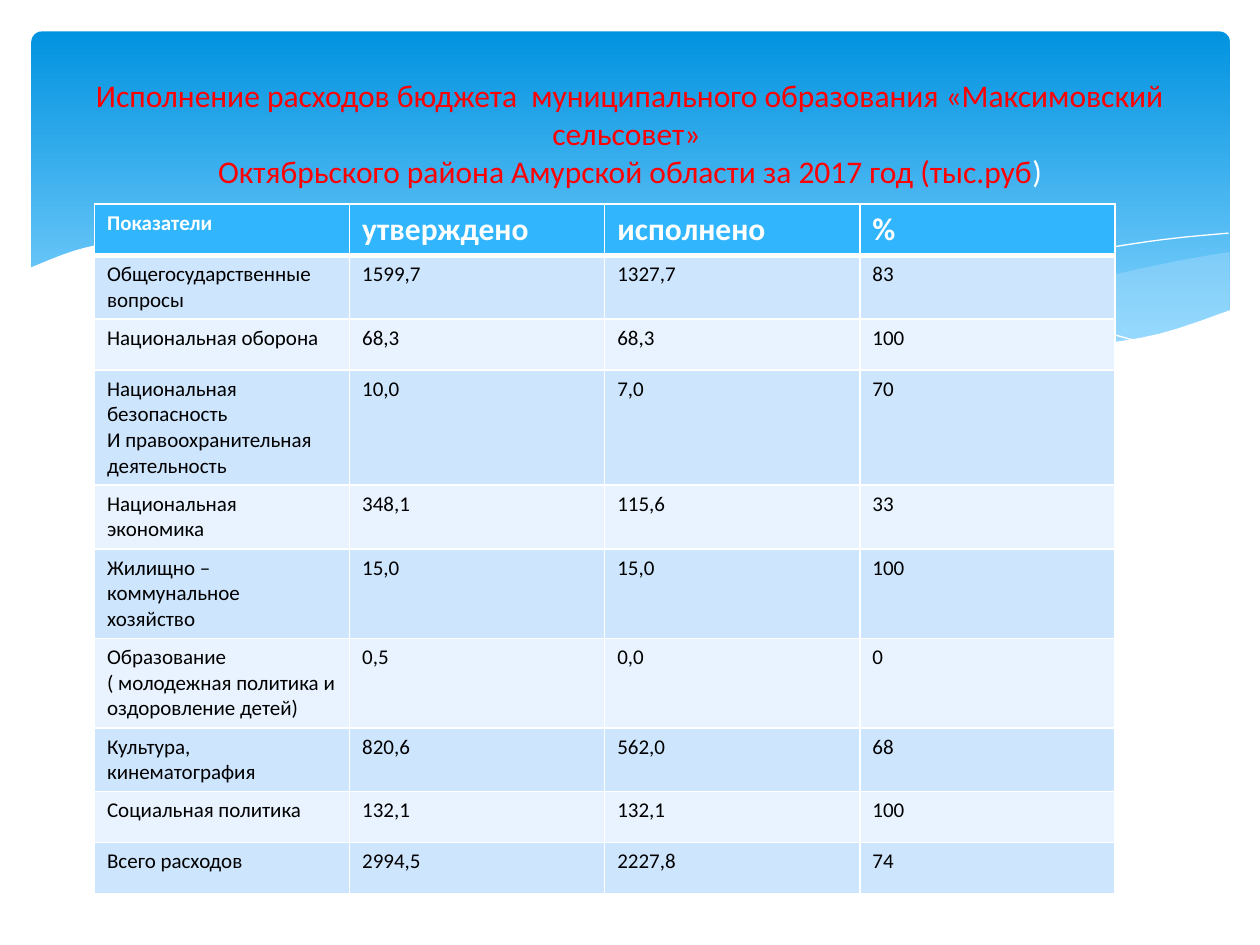
from lxml import etree
from pptx import Presentation, util as u
from pptx.dml.color import RGBColor
from pptx.enum import shapes, text
from pptx.oxml import ns

COLORS = {"white": "FFFFFF", "black": "000000", "red": "FF0000",
          "sky_top": "0293E0", "sky_bottom": "83D3FE", "wave": "C6E7FC",
          "header": "31B6FD", "odd": "CEE5FE", "even": "E8F3FF"}

TITLE = ["Исполнение расходов бюджета  муниципального образования «Максимовский сельсовет» ",
         "Октябрьского района Амурской области за 2017 год (тыс.руб"]

ROWS = [
    ("Показатели", "утверждено", "исполнено", "%"),
    ("Общегосударственные  вопросы", "1599,7", "1327,7", "83"),
    ("Национальная оборона", "68,3", "68,3", "100"),
    ("Национальная безопасность\nИ правоохранительная деятельность", "10,0", "7,0", "70"),
    ("Национальная  экономика", "348,1", "115,6", "33"),
    ("Жилищно – коммунальное\nхозяйство", "15,0", "15,0", "100"),
    ("Образование ( молодежная политика и оздоровление детей)", "0,5", "0,0", "0"),
    ("Культура, кинематография", "820,6", "562,0", "68"),
    ("Социальная политика", "132,1", "132,1", "100"),
    ("Всего расходов", "2994,5", "2227,8", "74"),
]

RIGHT_WAVE = [
    [(97.6, 20), (93.5, 20.7), (86.1, 22.3), (77.9, 24.2), (66.1, 26.5)],
    [(66.1, 26.5), (73.2, 27.4), (80.3, 27.8), (87.2, 27.4), (92.1, 26.5), (97.6, 24.7)],
]
MIDDLE_WAVE = [
    [(89.3, 27.3), (80.7, 26), (70.6, 24), (62.9, 22.2), (55.5, 20.5),
     (48.9, 19.6), (42, 18.7), (36.1, 18.5), (28.6, 19.1)],
    [(28.6, 19.1), (36.2, 20.3), (44.9, 22.2), (56.6, 24.8),
     (66.5, 26.6), (74.8, 27.6), (81.8, 27.8), (89.3, 27.3)],
]
LONG_LINE = [[(30.9, 19.5), (36.3, 18.9), (43.3, 18.7), (51, 19.2), (58.2, 20),
              (66.5, 21.3), (76, 23.3), (83.1, 25.1), (90.7, 27.2)]]
SHORT_LINE = [[(61.3, 25.7), (69.5, 23.5), (77.6, 21.6), (86.6, 19.9), (92.4, 19), (97.5, 18.5)]]
WHITE_WAVE = [
    [(97.7, 24.6), (92, 26.5), (86.3, 27.4), (80.9, 27.7), (74.4, 27.4), (66.8, 26.5),
     (57.9, 25), (50.3, 23.3), (44.7, 22), (36.5, 20.2), (29.2, 19), (23, 18.5),
     (17.7, 18.4), (13.2, 18.6), (9.5, 19.1), (5.9, 19.9), (2.3, 21.3)],
    [(2.3, 32.9), (97.7, 32.9)],
]


def smooth(knots, steps=4):
    if len(knots) < 3:
        return knots
    padded = [knots[0], *knots, knots[-1]]
    points = [knots[0]]
    for a, b, c, d in zip(padded, padded[1:], padded[2:], padded[3:]):
        for i in range(1, steps + 1):
            t = i / steps
            points.append(tuple(
                (2 * q + (r - p) * t + (2 * p - 5 * q + 4 * r - e) * t ** 2
                 + (3 * q - p - 3 * r + e) * t ** 3) / 2
                for p, q, r, e in zip(a, b, c, d)))
    return points


class Deck:
    COLS, ROWS = 100, 75
    FONT = "Calibri"

    def __init__(self):
        self.prs = Presentation()
        self.prs.slide_width, self.prs.slide_height = u.Inches(10), u.Inches(7.5)
        self.s = self.prs.slides.add_slide(self.prs.slide_layouts[5])

    def x(self, cols):
        return round(self.prs.slide_width * cols / self.COLS)

    def y(self, rows):
        return round(self.prs.slide_height * rows / self.ROWS)

    def box(self, left, top, width, height):
        return self.x(left), self.y(top), self.x(width), self.y(height)

    def color(self, name):
        return RGBColor.from_string(COLORS[name])

    def font(self, r, color, **values):
        for key, value in {"name": self.FONT, "bold": False, **values}.items():
            setattr(r.font, key, value)
        r.font.color.rgb = self.color(color)

    def panel(self, box, radius, top, bottom):
        sp = self.s.shapes.add_shape(shapes.MSO_SHAPE.ROUNDED_RECTANGLE, *self.box(*box))
        sp.adjustments[0] = radius
        sp.shadow.inherit = False
        sp.line.fill.background()
        sp.fill.gradient()
        sp.fill.gradient_angle = 270
        for stop, name, position in zip(sp.fill.gradient_stops, (top, bottom), (0, 0.9)):
            stop.color.rgb = self.color(name)
            stop.position = position

    def wave(self, edges, fill=None, alpha=100, line=None):
        points = [(self.x(c), self.y(r)) for edge in edges for c, r in smooth(edge)]
        builder = self.s.shapes.build_freeform(*points[0])
        builder.add_line_segments(points[1:], close=fill is not None)
        sp = builder.convert_to_shape()
        sp.shadow.inherit = False
        if fill:
            sp.fill.solid()
            sp.fill.fore_color.rgb = self.color(fill)
            clr = sp.fill._xPr.find(".//" + ns.qn("a:srgbClr"))
            etree.SubElement(clr, ns.qn("a:alpha"), val=str(alpha * 1000))
        else:
            sp.fill.background()
        if line:
            sp.line.color.rgb = self.color(line)
            sp.line.width = 0
        else:
            sp.line.fill.background()

    def borders(self, cell, **widths):
        tcPr = cell._tc.get_or_add_tcPr()
        for side, width in widths.items():
            ln = etree.SubElement(tcPr, ns.qn("a:ln" + side), w=str(u.Pt(width)))
            fill = etree.SubElement(ln, ns.qn("a:solidFill"))
            etree.SubElement(fill, ns.qn("a:srgbClr"), val=COLORS["white"])

    def table(self, rows, left, top, col_width, row_height):
        n_rows, n_cols = len(rows), len(rows[0])
        box = self.box(left, top, col_width * n_cols, row_height * n_rows)
        tbl = self.s.shapes.add_table(n_rows, n_cols, *box).table
        for i, row in enumerate(rows):
            head = i == 0
            for j, value in enumerate(row):
                cell = tbl.cell(i, j)
                cell.text = value
                self.borders(cell, L=1, R=1, T=3 if i == 1 else 1, B=3 if head else 1)
                cell.fill.solid()
                cell.fill.fore_color.rgb = self.color(
                    "header" if head else "odd" if i % 2 else "even")
                for p in cell.text_frame.paragraphs:
                    for r in p.runs:
                        self.font(r, "white" if head else "black", bold=head,
                                  size=u.Pt(18 if head and j else 12))

    def title(self, box, lines, ending):
        sp = self.s.shapes.title
        sp.left, sp.top, sp.width, sp.height = self.box(*box)
        tf = sp.text_frame
        for key, value in {"word_wrap": True, "auto_size": text.MSO_AUTO_SIZE.NONE,
                           "vertical_anchor": text.MSO_ANCHOR.MIDDLE}.items():
            setattr(tf, key, value)
        p = tf.paragraphs[0]
        p.alignment = text.PP_ALIGN.CENTER
        for i, line in enumerate(lines):
            if i:
                p.add_line_break()
            r = p.add_run()
            r.text = line
            self.font(r, "red", size=u.Pt(18))
        r = p.add_run()
        r.text = ending
        self.font(r, "white", size=u.Pt(18))
        self.s.shapes._spTree.append(sp._element)


def main():
    deck = Deck()
    deck.panel((2.5, 2.5, 95.1, 27), 0.03, "sky_top", "sky_bottom")
    deck.wave(RIGHT_WAVE, fill="wave", alpha=29)
    deck.wave(MIDDLE_WAVE, fill="wave", alpha=40)
    deck.wave(LONG_LINE, line="white")
    deck.wave(SHORT_LINE, line="white")
    deck.wave(WHITE_WAVE, fill="white")
    deck.table(ROWS, 7.5, 16.2, 20.25, 4.05)
    deck.title((5, 3.7, 90, 13.7), TITLE, ")")
    deck.prs.save("out.pptx")


if __name__ == "__main__":
    main()
